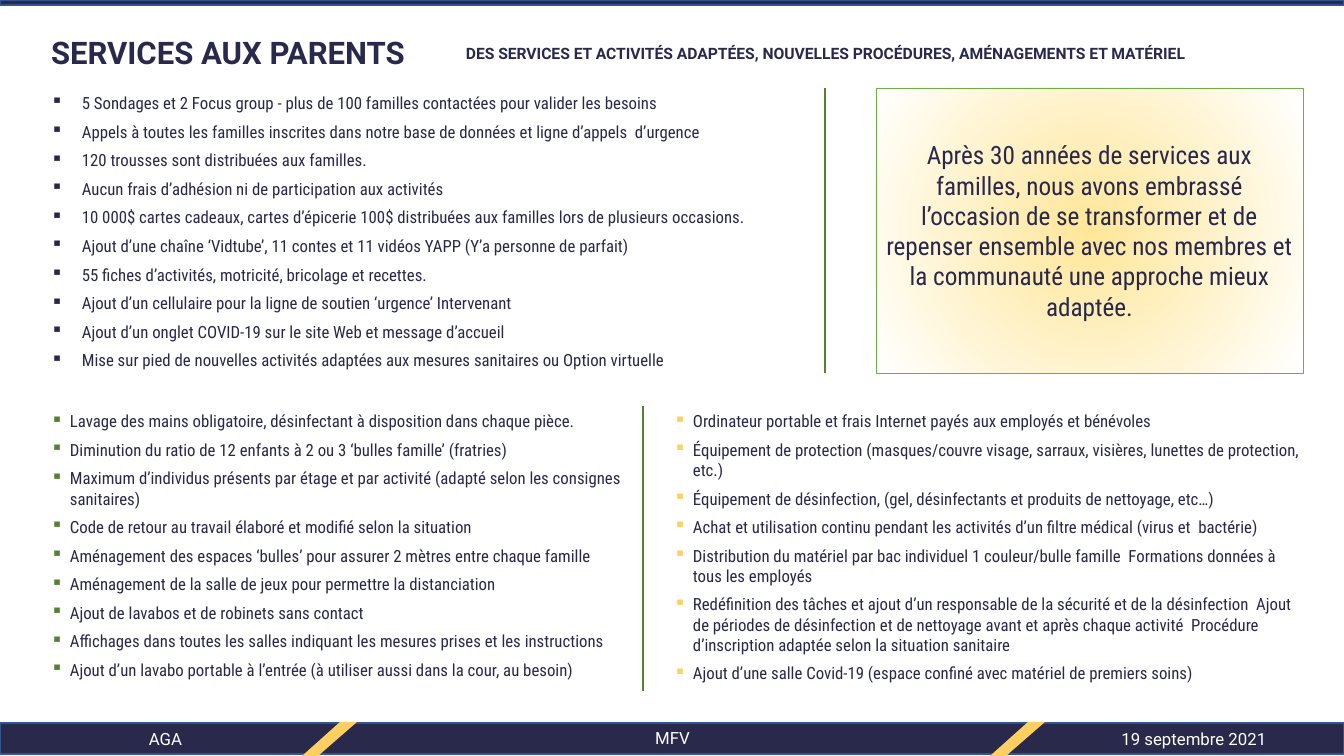
from dataclasses import dataclass

from lxml import etree
from pptx import Presentation
from pptx.dml.color import RGBColor
from pptx.enum.shapes import MSO_CONNECTOR, MSO_SHAPE
from pptx.enum.text import MSO_ANCHOR, MSO_AUTO_SIZE, PP_ALIGN
from pptx.oxml.ns import qn
from pptx.util import Emu, Pt

LEFT, CENTER = PP_ALIGN.LEFT, PP_ALIGN.CENTER
TOP, MIDDLE = MSO_ANCHOR.TOP, MSO_ANCHOR.MIDDLE
RECTANGLE, STRAIGHT = MSO_SHAPE.RECTANGLE, MSO_CONNECTOR.STRAIGHT
NO_AUTOFIT = MSO_AUTO_SIZE.NONE


@dataclass(frozen=True)
class Theme:
    navy: str = "29294C"
    ink: str = "29284B"
    edge: str = "325491"
    yellow: str = "FFD061"
    green: str = "548235"
    leaf: str = "70AD47"
    glow: str = "FFE699"
    white: str = "FFFFFF"
    heading: str = "Roboto"
    body: str = "Roboto Condensed"
    title_size: float = 22.2
    subtitle_size: float = 11.2
    text_size: float = 12
    quote_size: float = 18


THEME = Theme()
PAGE_WIDTH, PAGE_HEIGHT = 1344, 756

TITLE = "SERVICES AUX PARENTS"
SUBTITLE = "DES SERVICES ET ACTIVITÉS ADAPTÉES, NOUVELLES PROCÉDURES, AMÉNAGEMENTS ET MATÉRIEL"
QUOTE = ("Après 30 années de services aux familles, nous avons embrassé l’occasion de se transformer "
         "et de repenser ensemble avec nos membres et la communauté une approche mieux adaptée.")
SERVICES = [
    "5 Sondages et 2 Focus group - plus de 100 familles contactées pour valider les besoins",
    "Appels à toutes les familles inscrites dans notre base de données et ligne d’appels  d’urgence",
    "120 trousses sont distribuées aux familles.",
    "Aucun frais d’adhésion ni de participation aux activités",
    "10 000$ cartes cadeaux, cartes d’épicerie 100$ distribuées aux familles lors de plusieurs occasions.",
    "Ajout d’une chaîne ‘Vidtube’, 11 contes et 11 vidéos YAPP (Y’a personne de parfait)",
    "55 fiches d’activités, motricité, bricolage et recettes.",
    "Ajout d’un cellulaire pour la ligne de soutien ‘urgence’ Intervenant",
    "Ajout d’un onglet COVID-19 sur le site Web et message d’accueil",
    "Mise sur pied de nouvelles activités adaptées aux mesures sanitaires ou Option virtuelle",
]
MEASURES = [
    "Lavage des mains obligatoire, désinfectant à disposition dans chaque pièce.",
    "Diminution du ratio de 12 enfants à 2 ou 3 ‘bulles famille’ (fratries)",
    "Maximum d’individus présents par étage et par activité (adapté selon les consignes sanitaires)",
    "Code de retour au travail élaboré et modifié selon la situation",
    "Aménagement des espaces ‘bulles’ pour assurer 2 mètres entre chaque famille",
    "Aménagement de la salle de jeux pour permettre la distanciation",
    "Ajout de lavabos et de robinets sans contact",
    "Affichages dans toutes les salles indiquant les mesures prises et les instructions",
    "Ajout d’un lavabo portable à l’entrée (à utiliser aussi dans la cour, au besoin)",
]
EQUIPMENT = [
    "Ordinateur portable et frais Internet payés aux employés et bénévoles",
    "Équipement de protection (masques/couvre visage, sarraux, visières, lunettes de protection, etc.)",
    "Équipement de désinfection, (gel, désinfectants et produits de nettoyage, etc…)",
    "Achat et utilisation continu pendant les activités d’un filtre médical (virus et  bactérie)",
    "Distribution du matériel par bac individuel 1 couleur/bulle famille  Formations données à tous les employés",
    "Redéfinition des tâches et ajout d’un responsable de la sécurité et de la désinfection  Ajout de périodes "
    "de désinfection et de nettoyage avant et après chaque activité  Procédure d’inscription adaptée selon la "
    "situation sanitaire",
    "Ajout d’une salle Covid-19 (espace confiné avec matériel de premiers soins)",
]
LISTS = [
    (SERVICES, (41, 88, 733, 290), 31, None),
    (MEASURES, (41, 406, 602, 281), 19, THEME.green),
    (EQUIPMENT, (664, 406, 655, 285), 19, THEME.yellow),
]
DIVIDERS = [(643, 406), (825, 88)]
DIVIDER_HEIGHT = 285
BARS = [(0, 723, PAGE_WIDTH, 31), (0, 0, PAGE_WIDTH, 5)]
STRIPE = [(38, 722), (55, 722), (16, PAGE_HEIGHT), (0, PAGE_HEIGHT)]
STRIPE_LEFTS = [302, 990]
FOOTER = [("AGA", (117, 724, 97, 30)), ("MFV", (624, 723, 97, 30)),
          ("19 septembre 2021", (1103, 724, 182, 30))]


def px(length):
    return Emu(round(length * 914400 / 100.8))


def place(frame):
    return [px(length) for length in frame]


def rgb(value):
    return RGBColor.from_string(value)


def set_frame(box, anchor=TOP):
    frame = box.text_frame
    frame.word_wrap = True
    frame.auto_size = NO_AUTOFIT
    frame.vertical_anchor = anchor
    return frame


def write(para, text, size, font, color, bold=False, align=LEFT):
    para.alignment = align
    span = para.add_run()
    span.text = text
    span.font.size = Pt(size)
    span.font.name = font
    span.font.bold = bold
    span.font.color.rgb = rgb(color)


def add_bullet(para, indent, color):
    properties = para._p.get_or_add_pPr()
    properties.set("marL", str(px(indent)))
    properties.set("indent", str(-px(indent)))
    if color:
        tint = etree.SubElement(properties, qn("a:buClr"))
        etree.SubElement(tint, qn("a:srgbClr")).set("val", color)
    etree.SubElement(properties, qn("a:buChar")).set("char", "▪")


def add_list(page, items, frame, indent, color):
    text_frame = set_frame(page.shapes.add_textbox(*place(frame)))
    for index, item in enumerate(items):
        para = text_frame.add_paragraph() if index else text_frame.paragraphs[0]
        write(para, item, THEME.text_size, THEME.body, THEME.ink)
        para.space_before = Pt(6)
        add_bullet(para, indent, color)


def add_heading(box, text, size):
    para = set_frame(box, MIDDLE).paragraphs[0]
    write(para, text, size, THEME.heading, THEME.navy, bold=True)
    para.line_spacing = 0.9


def add_bar(page, frame):
    bar = page.shapes.add_shape(RECTANGLE, *place(frame))
    bar.shadow.inherit = False
    bar.fill.solid()
    bar.fill.fore_color.rgb = rgb(THEME.navy)
    bar.line.color.rgb = rgb(THEME.edge)
    bar.line.width = Pt(1)


def add_stripe(page, left):
    corners = [(px(left + x), px(y)) for x, y in STRIPE]
    builder = page.shapes.build_freeform(*corners[0])
    builder.add_line_segments(corners[1:], close=True)
    stripe = builder.convert_to_shape()
    stripe.shadow.inherit = False
    stripe.fill.solid()
    stripe.fill.fore_color.rgb = rgb(THEME.yellow)
    stripe.line.fill.background()


def add_divider(page, left, top):
    divider = page.shapes.add_connector(STRAIGHT, *place((left, top, left, top + DIVIDER_HEIGHT)))
    divider.line.color.rgb = rgb(THEME.green)
    divider.line.width = Pt(1.5)
    etree.SubElement(divider._element.spPr, qn("a:effectLst"))


def add_quote(page):
    panel = page.shapes.add_shape(RECTANGLE, *place((876, 88, 427, 285)))
    panel.shadow.inherit = False
    panel.fill.gradient()
    for stop, color, position in zip(panel.fill.gradient_stops, (THEME.glow, THEME.white), (0.01, 1)):
        stop.color.rgb = rgb(color)
        stop.position = position
    gradient = panel._element.spPr.find(qn("a:gradFill"))
    gradient.remove(gradient.find(qn("a:lin")))
    radial = etree.SubElement(gradient, qn("a:path"))
    radial.set("path", "circle")
    center = etree.SubElement(radial, qn("a:fillToRect"))
    for side in "ltrb":
        center.set(side, "50000")
    panel.line.color.rgb = rgb(THEME.leaf)
    panel.line.width = Pt(0.5)
    para = set_frame(panel, MIDDLE).paragraphs[0]
    write(para, QUOTE, THEME.quote_size, THEME.body, THEME.ink, align=CENTER)


def main():
    deck = Presentation()
    deck.slide_width, deck.slide_height = px(PAGE_WIDTH), px(PAGE_HEIGHT)
    page = deck.slides.add_slide(deck.slide_layouts[5])
    for frame in BARS:
        add_bar(page, frame)
    for left in STRIPE_LEFTS:
        add_stripe(page, left)
    for text, frame in FOOTER:
        para = set_frame(page.shapes.add_textbox(*place(frame))).paragraphs[0]
        write(para, text, THEME.text_size, THEME.heading, THEME.white, align=CENTER)
    title = page.shapes.title
    title.left, title.top, title.width, title.height = place((41, 32, 410, 44))
    add_heading(title, TITLE, THEME.title_size)
    add_heading(page.shapes.add_textbox(*place((456, 32, 847, 44))), SUBTITLE, THEME.subtitle_size)
    for items, frame, indent, color in LISTS:
        add_list(page, items, frame, indent, color)
    for left, top in DIVIDERS:
        add_divider(page, left, top)
    add_quote(page)
    deck.save("out.pptx")


if __name__ == "__main__":
    main()
